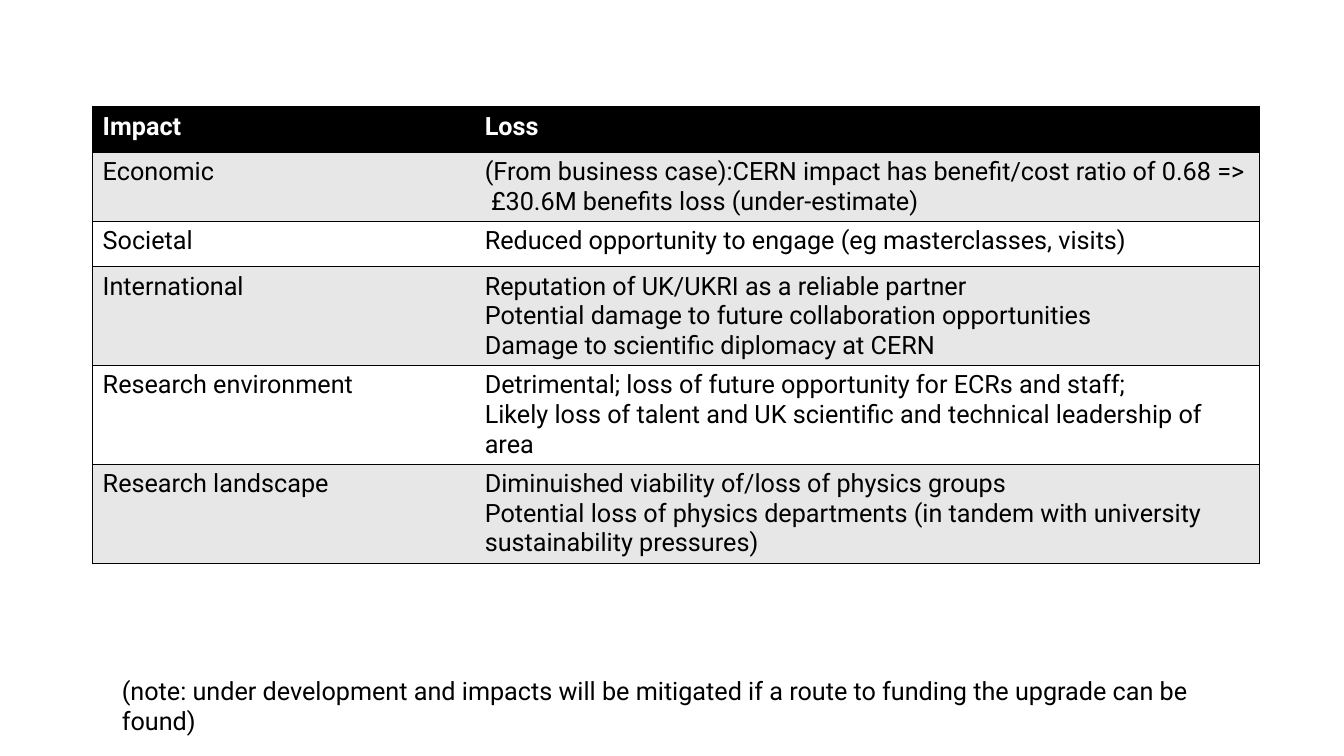
from dataclasses import dataclass

from lxml.etree import SubElement
from pptx import Presentation
from pptx.dml.color import RGBColor
from pptx.oxml.ns import qn
from pptx.util import Pt


@dataclass(frozen=True)
class Theme:
    font: str = "Roboto"
    size: float = 18
    line: float = 1
    black: str = "000000"
    white: str = "FFFFFF"
    band: str = "E7E7E7"


THEME = Theme()

COLUMN_WIDTHS = (272.9, 560.7)
ROW_HEIGHT = 32.4

HEADINGS = ("Impact", ["Loss"])
IMPACTS = [
    ("Economic", [
        "(From business case):CERN impact has benefit/cost ratio of 0.68 =>  £30.6M benefits loss (under-estimate)",
    ]),
    ("Societal", ["Reduced opportunity to engage (eg masterclasses, visits)"]),
    ("International", [
        "Reputation of UK/UKRI as a reliable partner",
        "Potential damage to future collaboration opportunities",
        "Damage to scientific diplomacy at CERN",
    ]),
    ("Research environment", [
        "Detrimental; loss of future opportunity for ECRs and staff;",
        "Likely loss of talent and UK scientific and technical leadership of area",
    ]),
    ("Research landscape", [
        "Diminuished viability of/loss of physics groups",
        "Potential loss of physics departments (in tandem with university sustainability pressures)",
    ]),
]
NOTE = "(note: under development and impacts will be mitigated if a route to funding the upgrade can be found)"


def write_lines(frame, lines, color, bold=False):
    font_format = {"name": THEME.font, "size": Pt(THEME.size), "bold": bold}
    for index, line in enumerate(lines):
        para = frame.paragraphs[0] if index == 0 else frame.add_paragraph()
        span = para.add_run()
        span.text = line
        for name, value in font_format.items():
            setattr(span.font, name, value)
        span.font.color.rgb = RGBColor.from_string(color)


def add_borders(cell, visible):
    """Draw the sides named in visible and clear the others."""
    properties = cell._tc.get_or_add_tcPr()
    for side in "LRTB":
        line = SubElement(properties, qn(f"a:ln{side}"), w=str(Pt(THEME.line)))
        if side in visible:
            fill = SubElement(line, qn("a:solidFill"))
            SubElement(fill, qn("a:srgbClr"), val=THEME.black)
        else:
            SubElement(line, qn("a:noFill"))


def fill_cell(cell, lines, background, color, bold, sides):
    add_borders(cell, sides)
    cell.fill.solid()
    cell.fill.fore_color.rgb = RGBColor.from_string(background)
    write_lines(cell.text_frame, lines, color, bold)


def add_impact_table(page, left, top):
    rows = [HEADINGS, *IMPACTS]
    frame = page.shapes.add_table(
        len(rows), len(COLUMN_WIDTHS), Pt(left), Pt(top),
        Pt(sum(COLUMN_WIDTHS)), Pt(ROW_HEIGHT * len(rows)))
    table = frame.table
    table.horz_banding = False
    for column, width in zip(table.columns, COLUMN_WIDTHS):
        column.width = Pt(width)
    for index, (impact, losses) in enumerate(rows):
        table.rows[index].height = Pt(ROW_HEIGHT)
        heading = index == 0
        background = THEME.black if heading else (THEME.white, THEME.band)[index % 2]
        color = THEME.white if heading else THEME.black
        fill_cell(table.cell(index, 0), [impact], background, color, heading, "LTB")
        fill_cell(table.cell(index, 1), losses, background, color, heading, "RTB")


def add_note(page, left, top, width, height):
    box = page.shapes.add_textbox(Pt(left), Pt(top), Pt(width), Pt(height))
    box.text_frame.word_wrap = True
    write_lines(box.text_frame, [NOTE], THEME.black)


def main():
    deck = Presentation()
    deck.slide_width, deck.slide_height = Pt(960), Pt(540)
    page = deck.slides.add_slide(deck.slide_layouts[6])
    add_impact_table(page, 66.2, 76.3)
    add_note(page, 79.9, 478.8, 805.7, 29)
    deck.save("out.pptx")


if __name__ == "__main__":
    main()
